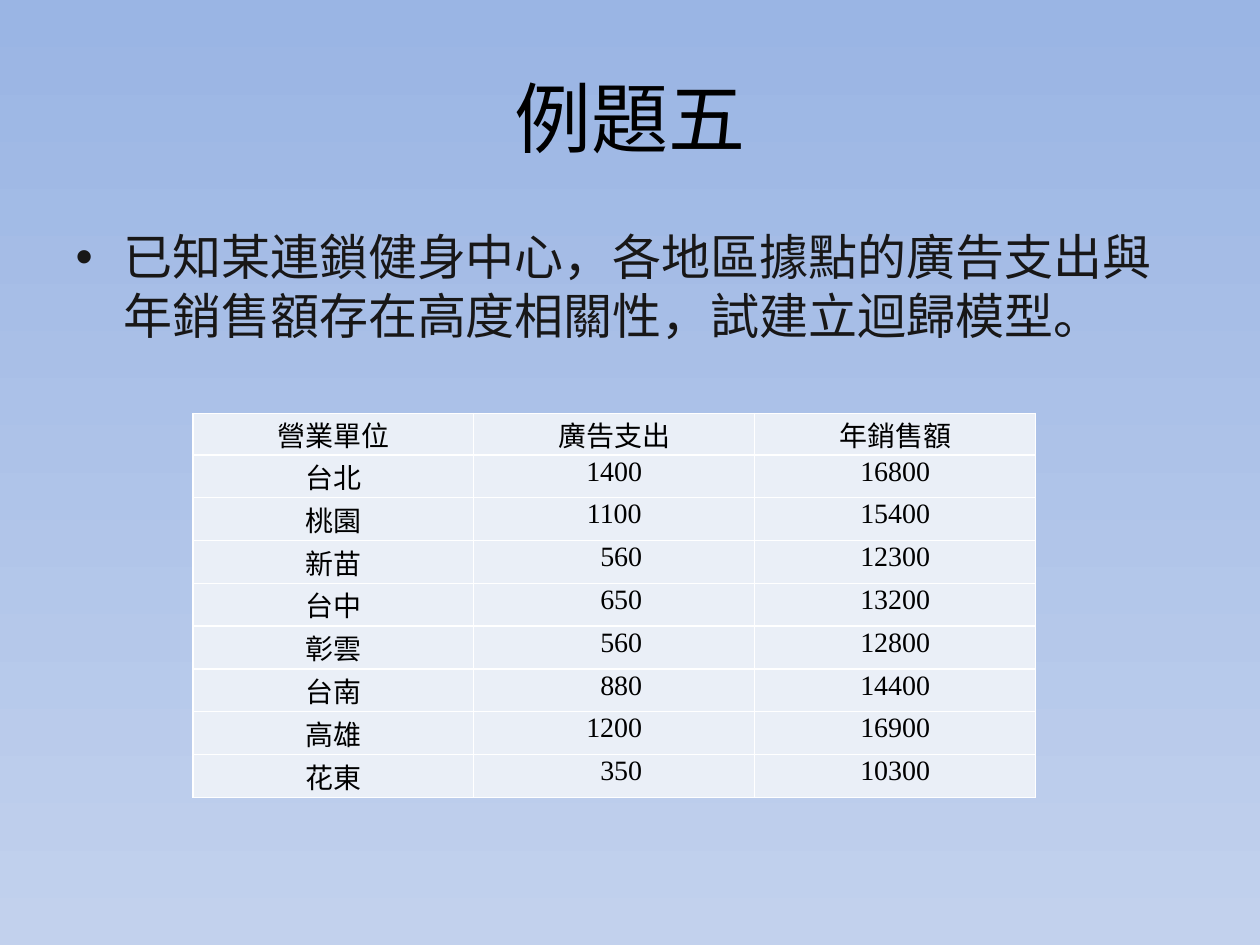
import pptx
import pptx.dml.color
import pptx.enum.text
import pptx.oxml
import pptx.oxml.ns
import pptx.util
import lxml.etree

WIDTH, HEIGHT = 10, 7.5
SANS, SERIF = "Noto Sans CJK SC", "Times New Roman"
CELL_SIZE = 16
CENTER = pptx.enum.text.PP_ALIGN.CENTER
LEFT = pptx.enum.text.PP_ALIGN.LEFT
MIDDLE = pptx.enum.text.MSO_ANCHOR.MIDDLE
TOP = pptx.enum.text.MSO_ANCHOR.TOP

ROWS = [
    ("營業單位", "廣告支出", "年銷售額"),
    ("台北", "1400", "16800"),
    ("桃園", "1100", "15400"),
    ("新苗", "560", "12300"),
    ("台中", "650", "13200"),
    ("彰雲", "560", "12800"),
    ("台南", "880", "14400"),
    ("高雄", "1200", "16900"),
    ("花東", "350", "10300"),
]


def inches(value):
    return pptx.util.Inches(value)


def color(hex_string):
    return pptx.dml.color.RGBColor.from_string(hex_string)


def add_child(parent, tag, **attributes):
    child = lxml.etree.SubElement(parent, pptx.oxml.ns.qn(tag))
    for name, value in attributes.items():
        child.set(name, value)
    return child


def write_text(frame, text, size=CELL_SIZE, latin=SANS, ink="000000",
               align=CENTER, anchor=TOP, bullet=None, hanging=0.38):
    """Fill a text frame with one formatted paragraph."""
    frame.word_wrap = True
    para = frame.paragraphs[0]
    if bullet:
        properties = para._p.get_or_add_pPr()
        properties.set("marL", str(inches(hanging)))
        properties.set("indent", str(-inches(hanging)))
        add_child(properties, "a:buChar", char=bullet)
    para.alignment = align
    para.space_before = pptx.util.Pt(0)
    span = para.add_run()
    span.text = text
    span.font.size = pptx.util.Pt(size)
    span.font.bold = False
    span.font.name = latin
    span.font.color.rgb = color(ink)
    add_child(span._r.get_or_add_rPr(), "a:ea", typeface=SANS)
    frame.vertical_anchor = anchor


def place(box, left, top, width, height):
    """Position a box by shares of the slide's size."""
    box.left, box.width = inches(left * WIDTH), inches(width * WIDTH)
    box.top, box.height = inches(top * HEIGHT), inches(height * HEIGHT)


def paint_background(page, top_color, bottom_color):
    fill = page.background.fill
    fill.gradient()
    fill.gradient_angle = 270
    for stop, shade in zip(fill.gradient_stops, (top_color, bottom_color)):
        stop.color.rgb = color(shade)


def draw_borders(cell, shade, points):
    properties = cell._tc.get_or_add_tcPr()
    for index, side in enumerate(("a:lnL", "a:lnR", "a:lnT", "a:lnB")):
        line = add_child(properties, side, w=str(pptx.util.Pt(points)))
        add_child(add_child(line, "a:solidFill"), "a:srgbClr", val=shade)
        properties.insert(index, line)


def add_data_table(page, rows, left, top, column_width, header_height, row_height):
    columns = len(rows[0])
    height = header_height + row_height * (len(rows) - 1)
    table = page.shapes.add_table(
        len(rows), columns, inches(left), inches(top),
        inches(column_width * columns), inches(height)).table
    table.first_row = table.horz_banding = False
    for column in table.columns:
        column.width = inches(column_width)
    for index, row in enumerate(table.rows):
        row.height = inches(row_height if index else header_height)

    # Shorter numbers shift right so that the last digits line up
    digit_width = CELL_SIZE / 2 / 72
    for column, values in enumerate(zip(*rows)):
        longest = max(len(value) for value in values)
        for row, value in enumerate(values):
            cell = table.cell(row, column)
            missing = longest - len(value) if value.isdigit() else 0
            cell.margin_left = inches(0.01 + missing * digit_width)
            cell.margin_right = cell.margin_top = inches(0.01)
            cell.margin_bottom = 0
            cell.fill.solid()
            cell.fill.fore_color.rgb = color("EAEFF7")
            draw_borders(cell, "FFFFFF", 1)
            write_text(cell.text_frame, value, latin=SERIF)


def main():
    deck = pptx.Presentation()
    deck.slide_width, deck.slide_height = inches(WIDTH), inches(HEIGHT)
    page = deck.slides.add_slide(deck.slide_layouts[1])
    paint_background(page, "9AB5E4", "C2D1ED")

    # Title and problem statement
    title, body = page.placeholders
    place(title, 0.05, 0.04, 0.9, 1 / 6)
    write_text(title.text_frame, "例題五", size=44, anchor=MIDDLE)
    place(body, 0.05, 7 / 30, 0.9, 0.66)
    write_text(body.text_frame,
               "已知某連鎖健身中心，各地區據點的廣告支出與年銷售額存在高度相關性，試建立迴歸模型。",
               size=28, ink="181717", align=LEFT, bullet="•")

    # Advertising and sales by region
    add_data_table(page, ROWS, left=1.53, top=3.28, column_width=2.23,
                   header_height=0.3, row_height=0.34)
    deck.save("out.pptx")


if __name__ == "__main__":
    main()
